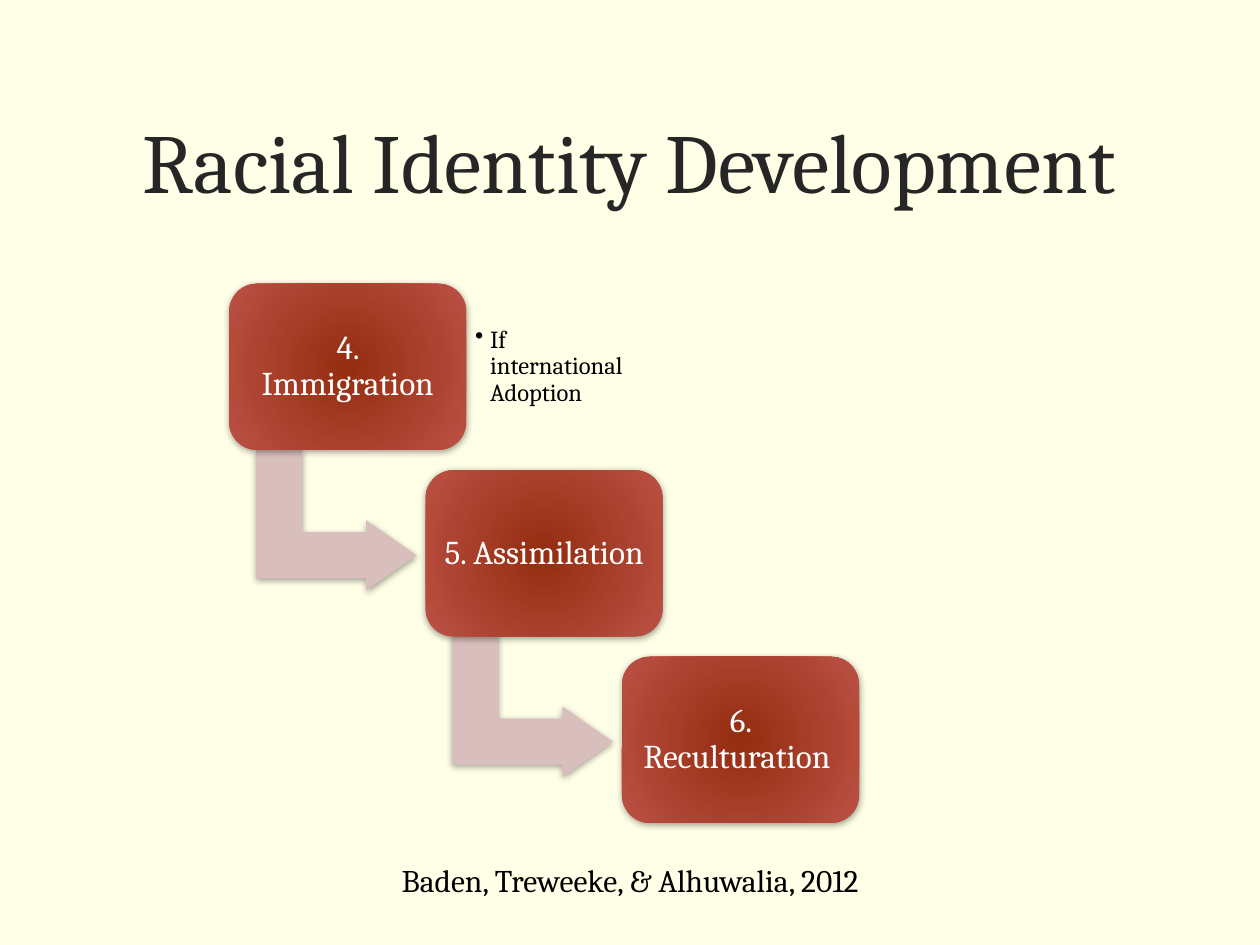
from dataclasses import dataclass

from lxml import etree
from pptx import Presentation
from pptx.dml.color import RGBColor
from pptx.enum.shapes import MSO_SHAPE
from pptx.enum.text import MSO_ANCHOR, PP_ALIGN
from pptx.oxml import parse_xml
from pptx.oxml.ns import nsdecls, qn
from pptx.util import Cm, Pt

ROUNDED, BENT_ARROW = MSO_SHAPE.ROUNDED_RECTANGLE, MSO_SHAPE.BENT_UP_ARROW
MIDDLE, TOP = MSO_ANCHOR.MIDDLE, MSO_ANCHOR.TOP
CENTER, LEFT = PP_ALIGN.CENTER, PP_ALIGN.LEFT

STAGES = ["4. Immigration", "5. Assimilation", "6. Reculturation "]
CARD_LEFT, CARD_TOP, CARD_WIDTH, CARD_HEIGHT = 4.62, 5.72, 4.78, 3.35
STEP_X, STEP_Y = 3.96, 3.76


@dataclass(frozen=True)
class Theme:
    font: str = "Cambria"
    background: str = "FFFEE6"
    heading: str = "262626"
    body: str = "000000"
    card_text: str = "FFFFFF"
    card_center: str = "952D10"
    card_edge: str = "BA5145"
    arrow: str = "D8BFBD"
    title_size: float = 48
    stage_size: float = 19
    source_size: float = 18
    note_size: float = 14


class StageSlide:
    """Draws the stages of a process on one slide in one theme."""

    def __init__(self, slide, theme):
        self.slide, self.theme = slide, theme
        background = slide.background.fill
        background.solid()
        background.fore_color.rgb = RGBColor.from_string(theme.background)

    def set_words(self, frame, words, size, color, align=CENTER, anchor=MIDDLE, inset=0.2, spacing=0.9):
        frame.text = words
        frame.word_wrap = True
        frame.vertical_anchor = anchor
        frame.margin_left = frame.margin_right = Cm(inset)
        frame.margin_top = frame.margin_bottom = Cm(min(inset, 0.2))
        paragraph = frame.paragraphs[0]
        paragraph.alignment = align
        paragraph.line_spacing = spacing
        font = paragraph.runs[0].font
        font.name, font.size = self.theme.font, Pt(size)
        font.color.rgb = RGBColor.from_string(color)
        return paragraph

    def text(self, words, left, top, width, height, size, color, **style):
        box = self.slide.shapes.add_textbox(Cm(left), Cm(top), Cm(width), Cm(height))
        return self.set_words(box.text_frame, words, size, color, **style)

    def bullet(self, words, left, top, width, height):
        paragraph = self.text(words, left, top, width, height, self.theme.note_size,
                              self.theme.body, align=LEFT, inset=0.18)
        properties = paragraph._p.get_or_add_pPr()
        properties.set("marL", str(Cm(0.3)))
        properties.set("indent", str(Cm(-0.3)))
        etree.SubElement(properties, qn("a:buChar"), char="•")

    def shape(self, preset, left, top, width, height, adjustments):
        shape = self.slide.shapes.add_shape(preset, Cm(left), Cm(top), Cm(width), Cm(height))
        for index, value in enumerate(adjustments):
            shape.adjustments[index] = value
        shape.line.fill.background()
        shape.shadow.inherit = False
        shape._element.spPr.find(qn("a:effectLst")).append(parse_xml(
            f'<a:outerShdw {nsdecls("a")} blurRad="{Pt(4)}" dist="{Pt(1)}" dir="5400000" '
            'rotWithShape="0"><a:srgbClr val="000000"><a:alpha val="37000"/></a:srgbClr></a:outerShdw>'))
        return shape

    def card(self, words, left, top):
        card = self.shape(ROUNDED, left, top, CARD_WIDTH, CARD_HEIGHT, [0.167])
        card.fill.gradient()
        colors = self.theme.card_center, self.theme.card_edge
        for position, (stop, color) in enumerate(zip(card.fill.gradient_stops, colors)):
            stop.position = position
            stop.color.rgb = RGBColor.from_string(color)
        gradient = card._element.spPr.find(qn("a:gradFill"))
        gradient.replace(gradient.find(qn("a:lin")), parse_xml(
            f'<a:path {nsdecls("a")} path="circle">'
            '<a:fillToRect l="40000" t="100000" r="40000" b="100000"/></a:path>'))
        self.set_words(card.text_frame, words, self.theme.stage_size, self.theme.card_text)

    def arrow(self, left, top):
        arrow = self.shape(BENT_ARROW, left, top, 2.84, 3.23, [0.328, 0.25, 0.358])
        arrow.rotation = 90
        arrow.fill.solid()
        arrow.fill.fore_color.rgb = RGBColor.from_string(self.theme.arrow)


def main():
    presentation = Presentation()
    presentation.slide_width, presentation.slide_height = Cm(25.4), Cm(19.05)
    theme = Theme()
    page = StageSlide(presentation.slides.add_slide(presentation.slide_layouts[6]), theme)
    page.text("Racial Identity Development", 1.52, 1.22, 22.33, 4.01,
              theme.title_size, theme.heading, inset=0.25, spacing=1)
    for index, stage in enumerate(STAGES):
        left, top = CARD_LEFT + index * STEP_X, CARD_TOP + index * STEP_Y
        if index < len(STAGES) - 1:
            page.arrow(left + 0.74, top + 3.15)
        page.card(stage, left, top)
    page.bullet("If international Adoption", CARD_LEFT + CARD_WIDTH, 6.05, 3.48, 2.69)
    page.text("Baden, Treweeke, & Alhuwalia, 2012", 6.81, 17.15, 11.79, 1.02,
              theme.source_size, theme.body, anchor=TOP, inset=0.25, spacing=1)
    presentation.save("out.pptx")


if __name__ == "__main__":
    main()
